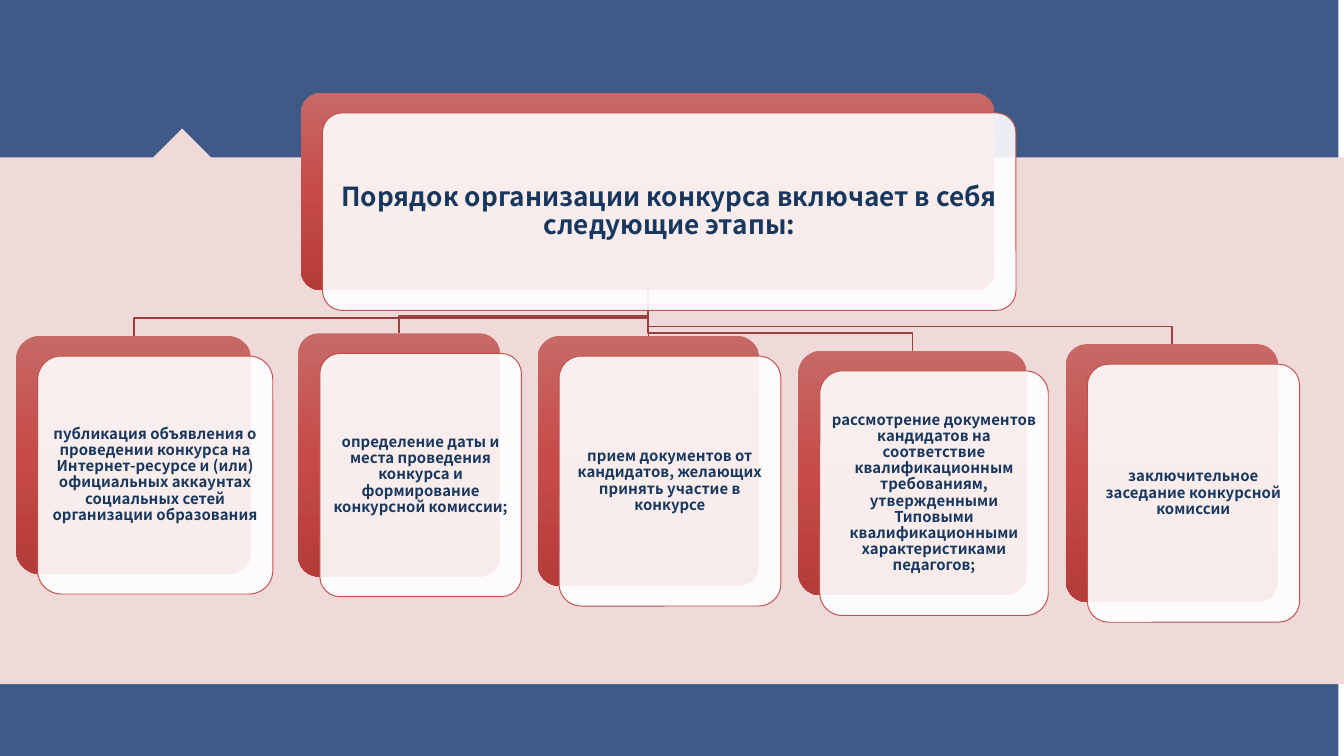
from copy import deepcopy
from dataclasses import dataclass

from lxml import etree
from pptx import Presentation
from pptx.dml.color import RGBColor
from pptx.enum.shapes import MSO_SHAPE as Shape
from pptx.enum.text import MSO_ANCHOR as Anchor, MSO_AUTO_SIZE as AutoSize, PP_ALIGN as Align
from pptx.oxml.ns import qn
from pptx.util import Inches, Pt


@dataclass(frozen=True)
class Theme:
    font: str = "Noto Sans CJK SC"
    title_size: float = 14
    step_size: float = 8
    navy: str = "3F5A87"
    pink: str = "F0D9D9"
    white: str = "FFFFFF"
    text: str = "17375E"
    outline: str = "C0504D"
    connector: str = "9A403E"
    gradient: tuple = ((0, "C76967"), (0.5, "C64B47"), (1, "B63C39"))


THEME = Theme()
PAGE_WIDTH = 10
PAGE_HEIGHT = PAGE_WIDTH * 9 / 16
TITLE = "Порядок организации конкурса включает в себя следующие этапы:"
TITLE_CARD = (2.24, 0.69, 5.16, 1.47)
STEPS = [
    ("публикация объявления о проведении конкурса на Интернет-ресурсе и (или) "
     "официальных аккаунтах социальных сетей организации образования",
     (0.12, 2.5, 1.75, 1.77)),
    ("определение даты и места проведения конкурса и формирование конкурсной комиссии;",
     (2.22, 2.48, 1.5, 1.81)),
    ("прием документов от кандидатов, желающих принять участие в конкурсе",
     (4, 2.5, 1.65, 1.86)),
    ("рассмотрение документов кандидатов на соответствие квалификационным требованиям, "
     "утвержденными Типовыми квалификационными характеристиками педагогов;",
     (5.94, 2.61, 1.7, 1.82)),
    ("заключительное заседание конкурсной комиссии",
     (7.93, 2.56, 1.58, 1.92)),
]
SHIFT_X, SHIFT_Y = 0.16, 0.15
ELBOW_RISE = 0.13
CORNER = 0.1


def color(value):
    return RGBColor.from_string(value)


def add_filled(slide, kind, bounds, fill):
    shape = slide.shapes.add_shape(kind, *map(Inches, bounds))
    shape.shadow.inherit = False
    shape.fill.solid()
    shape.fill.fore_color.rgb = color(fill)
    shape.line.fill.background()
    return shape


def set_gradient(shape):
    shape.fill.gradient()
    shape.fill.gradient_angle = 270
    last = shape.element.spPr.findall(".//" + qn("a:gs"))[-1]
    last.addnext(deepcopy(last))
    for stop, (position, value) in zip(shape.fill.gradient_stops, THEME.gradient):
        stop.position = position
        stop.color.rgb = color(value)


def add_card(slide, bounds):
    left, top, width, height = bounds
    back = add_filled(slide, Shape.ROUNDED_RECTANGLE, bounds, THEME.outline)
    set_gradient(back)
    front_left, front_top = left + SHIFT_X, top + SHIFT_Y
    front = add_filled(slide, Shape.ROUNDED_RECTANGLE,
                       (front_left, front_top, width, height), THEME.white)
    front.line.color.rgb = color(THEME.outline)
    front.line.width = Pt(0.5)
    tint = front.element.spPr.find(qn("a:solidFill"))[0]
    etree.SubElement(tint, qn("a:alpha"), val="90000")
    for shape in (back, front):
        shape.adjustments[0] = CORNER
    inset = 0.03 * min(width, height)
    return front_left + inset, front_top + inset, width - 2 * inset, height - 2 * inset


def write_text(box, bounds, text, size, margin):
    box.left, box.top, box.width, box.height = map(Inches, bounds)
    frame = box.text_frame
    frame.text = text
    frame.word_wrap = True
    frame.auto_size = AutoSize.NONE
    frame.vertical_anchor = Anchor.MIDDLE
    frame.margin_left = frame.margin_right = Inches(margin)
    frame.margin_top = frame.margin_bottom = Inches(margin)
    para = frame.paragraphs[0]
    para.alignment = Align.CENTER
    para.line_spacing = 0.9
    font = para.runs[0].font
    font.name = THEME.font
    font.size = Pt(size)
    font.bold = True
    font.color.rgb = color(THEME.text)


def add_elbow(slide, card):
    start_x = TITLE_CARD[0] + TITLE_CARD[2] / 2
    start_y = TITLE_CARD[1] + TITLE_CARD[3]
    end_x, end_y = card[0] + card[2] / 2, card[1]
    bend_y = end_y - ELBOW_RISE
    points = [(start_x, bend_y), (end_x, bend_y), (end_x, end_y)]
    builder = slide.shapes.build_freeform(Inches(start_x), Inches(start_y))
    builder.add_line_segments([(Inches(x), Inches(y)) for x, y in points], close=False)
    elbow = builder.convert_to_shape()
    elbow.shadow.inherit = False
    elbow.fill.background()
    elbow.line.color.rgb = color(THEME.connector)
    elbow.line.width = Pt(1)


def main():
    deck = Presentation()
    deck.slide_width, deck.slide_height = Inches(PAGE_WIDTH), Inches(PAGE_HEIGHT)
    slide = deck.slides.add_slide(deck.slide_layouts[5])
    title = slide.shapes.title

    add_filled(slide, Shape.RECTANGLE, (-0.04, 0, PAGE_WIDTH, PAGE_HEIGHT), THEME.navy)
    add_filled(slide, Shape.RECTANGLE, (0, 1.17, PAGE_WIDTH, 3.92), THEME.pink)
    notch = add_filled(slide, Shape.RIGHT_TRIANGLE, (1.2, 1.02, 0.31, 0.31), THEME.pink)
    notch.rotation = 135

    for text, card in reversed(STEPS):
        add_elbow(slide, card)

    title_bounds = add_card(slide, TITLE_CARD)
    write_text(title, title_bounds, TITLE, THEME.title_size, 0.06)
    slide.shapes.element.append(title.element)

    for text, card in STEPS:
        bounds = add_card(slide, card)
        box = slide.shapes.add_textbox(*map(Inches, bounds))
        write_text(box, bounds, text, THEME.step_size, 0.03)

    deck.save("out.pptx")


if __name__ == "__main__":
    main()
